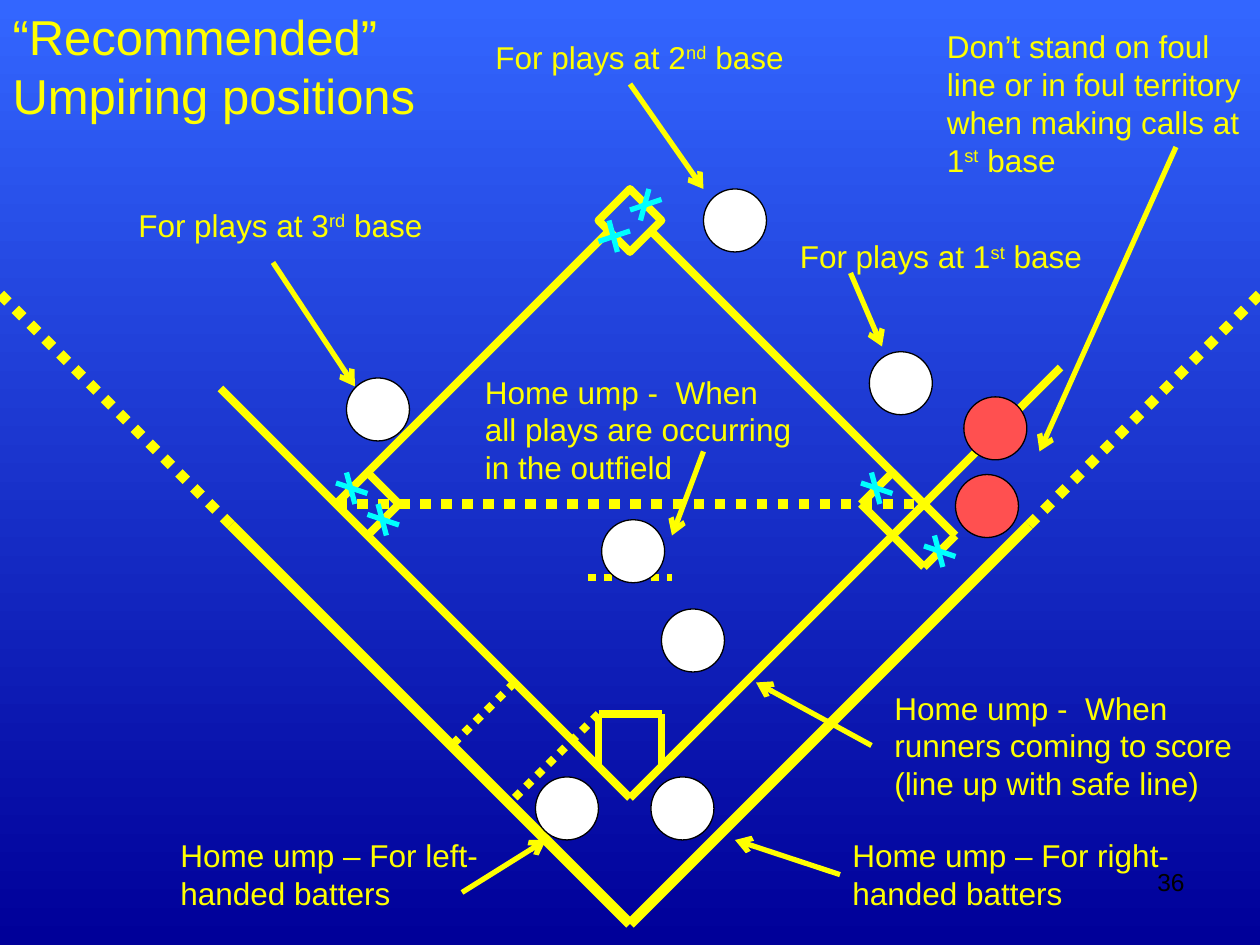
"""Build a slide showing recommended umpiring positions on a ball field."""
from itertools import pairwise

from lxml.etree import SubElement
from pptx import Presentation
from pptx.dml.color import RGBColor
from pptx.enum.dml import MSO_LINE as Dash
from pptx.enum.shapes import MSO_CONNECTOR as Connector, MSO_SHAPE as Shape
from pptx.enum.text import MSO_ANCHOR as Anchor, MSO_AUTO_SIZE as AutoSize, PP_ALIGN as Align
from pptx.oxml.ns import qn
from pptx.util import Pt

PX = 7620
YELLOW = RGBColor(0xFF, 0xFF, 0x00)
CYAN = RGBColor(0x00, 0xFF, 0xFF)
WHITE = RGBColor(0xFF, 0xFF, 0xFF)
RED = RGBColor(0xFF, 0x50, 0x50)
BLACK = RGBColor(0x00, 0x00, 0x00)
SKY = RGBColor(0x33, 0x66, 0xFF)
NAVY = RGBColor(0x00, 0x00, 0x99)

TITLE = "“Recommended” Umpiring positions"
PAGE_NUMBER = "36"

FIELD_PATHS = [
    (6, None, [(220, 500), (600, 880), (980, 500)]),
    (4.5, None, [(210, 370), (600, 760), (1010, 350)]),
    (4.5, None, [(320, 480), (580, 220)]),
    (4.5, None, [(880, 480), (620, 220)]),
    (6, Dash.ROUND_DOT, [(320, 480), (880, 480)]),
    (4.5, None, [(570, 730), (570, 680), (630, 680), (630, 730)]),
    (4.5, None, [(350, 450), (380, 480), (350, 510)]),
    (4.5, None, [(850, 450), (820, 480), (880, 540), (910, 510), (850, 450)]),
    (4.5, Dash.ROUND_DOT, [(570, 680), (490, 760)]),
    (4.5, Dash.ROUND_DOT, [(490, 650), (430, 710)]),
    (6, Dash.ROUND_DOT, [(220, 500), (0, 280)]),
    (6, Dash.ROUND_DOT, [(980, 500), (1200, 280)]),
    (4.5, Dash.ROUND_DOT, [(560, 550), (640, 550)]),
]

STEEP_DOWN = [(10, 0), (18, 30)]
STEEP_UP = [(18, 0), (10, 30)]
FLAT_DOWN = [(0, 10), (30, 20)]
FLAT_UP = [(0, 20), (30, 10)]
CROSSES = [
    (350, 480, STEEP_DOWN, FLAT_DOWN),
    (320, 450, STEEP_DOWN, FLAT_DOWN),
    (880, 510, STEEP_DOWN, FLAT_DOWN),
    (820, 450, STEEP_DOWN, FLAT_DOWN),
    (570, 210, STEEP_DOWN, FLAT_UP),
    (600, 180, STEEP_UP, FLAT_UP),
]

SPOT_SIZE = 60
SECOND_BASE = (570, 180)
UMPIRES = [
    (620, 740, WHITE), (510, 740, WHITE), (630, 580, WHITE),
    (918, 378, RED), (910, 452, RED), (828, 335, WHITE),
    (670, 180, WHITE), (573, 495, WHITE), (330, 360, WHITE),
]

LABELS = [
    ((800, 790, 360, 85), ["Home ump – For right-handed batters"]),
    ((160, 790, 310, 85), ["Home ump – For left-handed batters"]),
    ((840, 650, 360, 121),
     ["Home ump -  When runners coming to score (line up with safe line)"]),
    ((120, 190, 310, 48), ["For plays at 3", "rd", " base"]),
    ((460, 30, 310, 48), ["For plays at 2", "nd", " base"]),
    ((750, 220, 310, 48), ["For plays at 1", "st", " base"]),
    ((890, 20, 310, 157),
     ["Don’t stand on foul line or in foul territory when making calls at 1", "st", " base"]),
    ((450, 349, 320, 121), ["Home ump -  When all plays are occurring in the outfield"]),
]

ARROWS = [
    [(440, 850), (520, 800)], [(260, 250), (338, 368)],
    [(830, 710), (720, 650)], [(800, 833), (700, 800)],
    [(810, 260), (840, 330)], [(1120, 140), (990, 430)],
    [(670, 430), (640, 510)], [(600, 80), (670, 180)],
]


def scaled(*lengths):
    return [length * PX for length in lengths]


def add_path(page, points, color, width, dash=None, arrow=False):
    for start, end in pairwise(points):
        line = page.shapes.add_connector(Connector.STRAIGHT, *scaled(*start, *end))
        line.line.color.rgb = color
        line.line.width = Pt(width)
        if dash:
            line.line.dash_style = dash
        properties = line.line._get_or_add_ln()
        if arrow:
            SubElement(properties, qn("a:tailEnd"), type="arrow")
        SubElement(line._element.spPr, qn("a:effectLst"))


def add_spot(page, kind, left, top, fill, color, width):
    spot = page.shapes.add_shape(kind, *scaled(left, top, SPOT_SIZE, SPOT_SIZE))
    spot.shadow.inherit = False
    if fill is None:
        spot.fill.background()
    else:
        spot.fill.solid()
        spot.fill.fore_color.rgb = fill
    spot.line.color.rgb = color
    spot.line.width = Pt(width)


def style_span(span, size, color):
    span.font.name = "Arial"
    span.font.size = Pt(size)
    span.font.color.rgb = color


def add_text(page, place, parts, size=18, color=YELLOW, align=Align.LEFT):
    box = page.shapes.add_textbox(*scaled(*place))
    box.text_frame.word_wrap = True
    para = box.text_frame.paragraphs[0]
    para.alignment = align
    for index, part in enumerate(parts):
        span = para.add_run()
        span.text = part
        style_span(span, size, color)
        if index == 1:
            span.font._element.set("baseline", "30000")
    return box


def add_title(page):
    title = page.shapes.title
    title.left, title.top, title.width, title.height = scaled(0, 0, 420, 125)
    frame = title.text_frame
    frame.text = TITLE
    frame.word_wrap = True
    frame.auto_size = AutoSize.NONE
    frame.vertical_anchor = Anchor.TOP
    frame.paragraphs[0].alignment = Align.LEFT
    style_span(frame.paragraphs[0].runs[0], 28, YELLOW)


def paint_background(page):
    fill = page.background.fill
    fill.gradient()
    fill.gradient_angle = 270
    for stop, color in zip(fill.gradient_stops, (SKY, NAVY)):
        stop.color.rgb = color


def main():
    deck = Presentation()
    deck.slide_width, deck.slide_height = scaled(1200, 900)
    page = deck.slides.add_slide(deck.slide_layouts[5])
    paint_background(page)
    add_title(page)
    for width, dash, points in FIELD_PATHS:
        add_path(page, points, YELLOW, width, dash)
    for left, top, fill in UMPIRES:
        add_spot(page, Shape.OVAL, left, top, fill, BLACK, 0.75)
    add_spot(page, Shape.DIAMOND, *SECOND_BASE, None, YELLOW, 4.5)
    for left, top, *strokes in CROSSES:
        for stroke in strokes:
            add_path(page, [(left + x, top + y) for x, y in stroke], CYAN, 3)
    for place, parts in LABELS:
        box = add_text(page, place, parts)
        box.text_frame.auto_size = AutoSize.SHAPE_TO_FIT_TEXT
    for points in ARROWS:
        add_path(page, points, YELLOW, 3, arrow=True)
    add_text(page, (860, 820, 280, 62), [PAGE_NUMBER], 14, BLACK, Align.RIGHT)
    deck.save("out.pptx")


if __name__ == "__main__":
    main()
